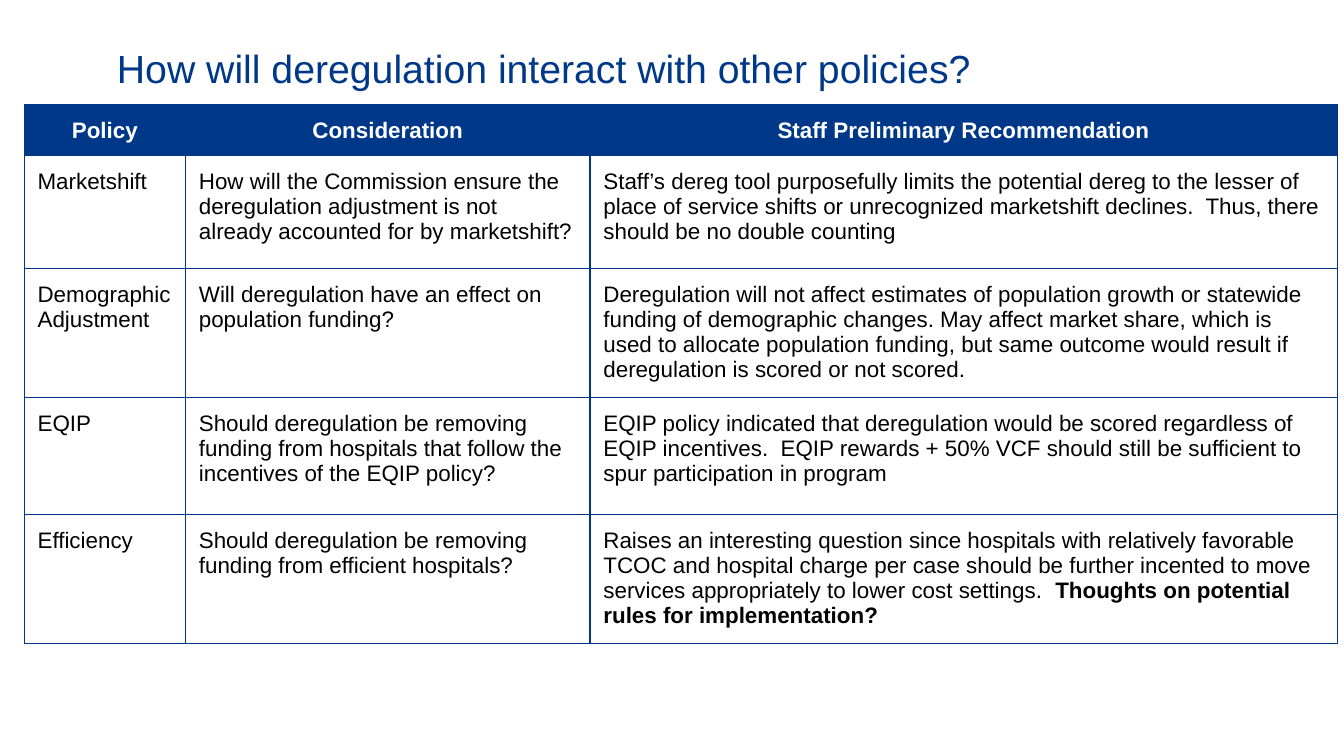
from lxml import etree
from pptx import Presentation
from pptx.dml.color import RGBColor
from pptx.enum import text
from pptx.oxml import ns
from pptx.util import Inches, Pt

NAVY = RGBColor(0x00, 0x38, 0x89)
WHITE = RGBColor(0xFF, 0xFF, 0xFF)
BLACK = RGBColor(0x00, 0x00, 0x00)
FONT = "Arial"

TITLE = "How will deregulation interact with other policies?"
COLUMN_WIDTHS = [1.2, 3.01, 5.56]
ROW_HEIGHTS = [0.38, 0.84, 0.96, 0.87, 0.96]
HEADINGS = ["Policy", "Consideration", "Staff Preliminary Recommendation"]
POLICIES = [
    ["Marketshift",
     "How will the Commission ensure the deregulation adjustment is not already "
     "accounted for by marketshift?",
     "Staff’s dereg tool purposefully limits the potential dereg to the lesser of "
     "place of service shifts or unrecognized marketshift declines.  Thus, there "
     "should be no double counting"],
    ["Demographic Adjustment",
     "Will deregulation have an effect on population funding?",
     "Deregulation will not affect estimates of population growth or statewide "
     "funding of demographic changes. May affect market share, which is used to "
     "allocate population funding, but same outcome would result if deregulation "
     "is scored or not scored."],
    ["EQIP",
     "Should deregulation be removing funding from hospitals that follow the "
     "incentives of the EQIP policy?",
     "EQIP policy indicated that deregulation would be scored regardless of EQIP "
     "incentives.  EQIP rewards + 50% VCF should still be sufficient to spur "
     "participation in program"],
    ["Efficiency",
     "Should deregulation be removing funding from efficient hospitals?",
     "Raises an interesting question since hospitals with relatively favorable TCOC "
     "and hospital charge per case should be further incented to move services "
     "appropriately to lower cost settings.  "],
]
OPEN_QUESTION = "Thoughts on potential rules for implementation?"


def format_run(run, size, color, bold=False):
    run.font.name = FONT
    run.font.size = Pt(size)
    run.font.bold = bold
    run.font.color.rgb = color


def add_title(slide, left, top, width, height):
    title = slide.shapes.add_textbox(
        Inches(left), Inches(top), Inches(width), Inches(height))
    frame = title.text_frame
    frame.word_wrap = True
    frame.vertical_anchor = text.MSO_ANCHOR.TOP
    frame.margin_left = frame.margin_right = Inches(0.07)
    frame.margin_top = frame.margin_bottom = Inches(0.04)
    frame.text = TITLE
    format_run(frame.paragraphs[0].runs[0], 21, NAVY)


def add_borders(cell):
    properties = cell._tc.get_or_add_tcPr()
    for side in ("a:lnL", "a:lnR", "a:lnT", "a:lnB"):
        border = etree.SubElement(properties, ns.qn(side), w=str(Pt(0.75)))
        fill = etree.SubElement(border, ns.qn("a:solidFill"))
        etree.SubElement(fill, ns.qn("a:srgbClr"), val=str(NAVY))


def fill_cell(cell, content, is_heading):
    cell.margin_left = cell.margin_right = cell.margin_top = Inches(0.1)
    cell.margin_bottom = Inches(0.04)
    add_borders(cell)
    cell.text_frame.text = content
    paragraph = cell.text_frame.paragraphs[0]
    if is_heading:
        cell.fill.solid()
        cell.fill.fore_color.rgb = NAVY
        paragraph.alignment = text.PP_ALIGN.CENTER
    else:
        cell.fill.background()
    format_run(paragraph.runs[0], 12, WHITE if is_heading else BLACK, is_heading)


def add_policy_table(slide, left, top):
    rows = [HEADINGS] + POLICIES
    table = slide.shapes.add_table(
        len(rows), len(HEADINGS), Inches(left), Inches(top),
        Inches(sum(COLUMN_WIDTHS)), Inches(sum(ROW_HEIGHTS))).table
    table.horz_banding = False
    for column, width in zip(table.columns, COLUMN_WIDTHS):
        column.width = Inches(width)
    for row, height in zip(table.rows, ROW_HEIGHTS):
        row.height = Inches(height)
    for r, contents in enumerate(rows):
        for c, content in enumerate(contents):
            fill_cell(table.cell(r, c), content, r == 0)
    efficiency = table.cell(len(rows) - 1, len(HEADINGS) - 1)
    question = efficiency.text_frame.paragraphs[0].add_run()
    question.text = OPEN_QUESTION
    format_run(question, 12, BLACK, True)


def main():
    deck = Presentation()
    deck.slide_width = Inches(10)
    deck.slide_height = deck.slide_width * 9 // 16
    slide = deck.slides.add_slide(deck.slide_layouts[6])
    add_title(slide, 0.8, 0.29, 8.62, 0.49)
    add_policy_table(slide, 0.18, 0.78)
    deck.save("out.pptx")


if __name__ == "__main__":
    main()
